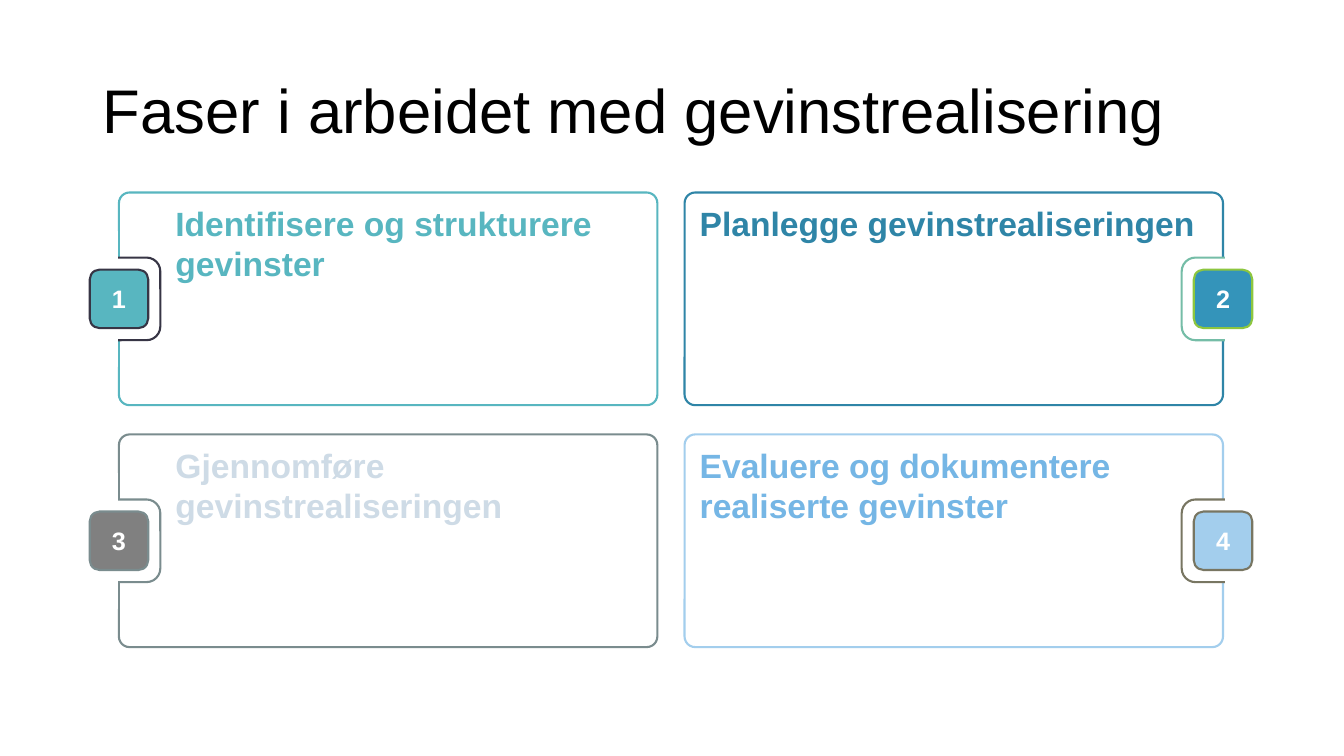
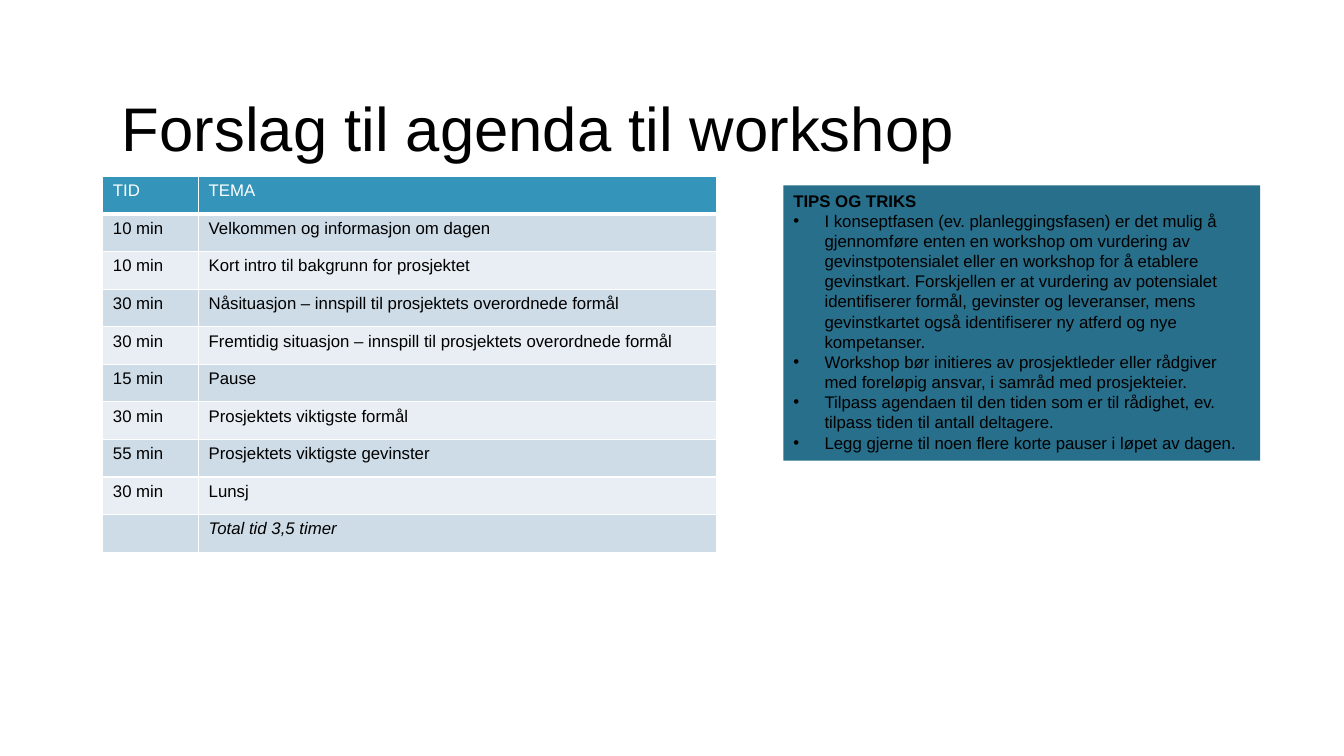
from lxml import etree
from pptx import Presentation, util as u
from pptx.dml.color import RGBColor
from pptx.enum import shapes, text
from pptx.oxml.ns import qn

# Content
FACES = "Faser i arbeidet med gevinstrealisering"
# heading, panel line, heading colour, badge fill, badge line
PHASES = [
    ("Identifisere og strukturere gevinster", "teal", "teal", "teal", "ink"),
    ("Planlegge gevinstrealiseringen", "ocean", "ocean", "blue", "lime"),
    ("Gjennomføre gevinstrealiseringen", "slate", "mist", "grey", "slate"),
    ("Evaluere og dokumentere realiserte gevinster", "sky", "azure", "sky", "olive"),
]
BRACKET_LINES = ["ink", "green", "slate", "olive"]
AGENDA_TITLE = "Forslag til agenda til workshop"
AGENDA = [
    ("TID", "TEMA"),
    ("10 min", "Velkommen og informasjon om dagen"),
    ("10 min", "Kort intro til bakgrunn for prosjektet"),
    ("30 min", "Nåsituasjon – innspill til prosjektets overordnede formål"),
    ("30 min", "Fremtidig situasjon – innspill til prosjektets overordnede formål"),
    ("15 min", "Pause"),
    ("30 min", "Prosjektets viktigste formål"),
    ("55 min", "Prosjektets viktigste gevinster"),
    ("30 min", "Lunsj"),
    ("", "Total tid 3,5 timer"),
]
TIPS_HEADING = "TIPS OG TRIKS"
TIPS = [
    "I konseptfasen (ev. planleggingsfasen) er det mulig å gjennomføre enten en "
    "workshop om vurdering av gevinstpotensialet eller en workshop for å etablere "
    "gevinstkart. Forskjellen er at vurdering av potensialet identifiserer formål, "
    "gevinster og leveranser, mens gevinstkartet også identifiserer ny atferd og nye "
    "kompetanser.",
    "Workshop bør initieres av prosjektleder eller rådgiver med foreløpig ansvar, "
    "i samråd med prosjekteier.",
    "Tilpass agendaen til den tiden som er til rådighet, ev. tilpass tiden til antall "
    "deltagere.",
    "Legg gjerne til noen flere korte pauser i løpet av dagen.",
]

# Shared style
COLORS = {
    "black": "000000", "white": "FFFFFF", "teal": "58B6C0", "ocean": "2F85A7",
    "slate": "7A8C8E", "sky": "A3CEED", "mist": "CEDBE6", "azure": "75B6E5",
    "blue": "3494BA", "grey": "808080", "ink": "373545", "lime": "8DC63F",
    "green": "75BDA7", "olive": "787662", "band": "CEDCE7", "pale": "E8EEF3",
    "deep": "276F8B",
}
FONT = "Arial"
WIDTH, HEIGHT = 13.33, 7.5
RECT, ROUND = shapes.MSO_SHAPE.RECTANGLE, shapes.MSO_SHAPE.ROUNDED_RECTANGLE


def rgb(name):
    return RGBColor.from_string(COLORS[name])


def write(p, words, size, color, **fmt):
    r = p.add_run()
    r.text = words
    for key, value in dict(name=FONT, size=u.Pt(size), **fmt).items():
        setattr(r.font, key, value)
    r.font.color.rgb = rgb(color)


def inches(box):
    return [u.Inches(v) for v in box]


def add_box(tree, kind, box, fill, line=None, weight=1.5):
    sp = tree.add_shape(kind, *inches(box))
    sp.shadow.inherit = False
    sp.fill.solid()
    sp.fill.fore_color.rgb = rgb(fill)
    if line:
        sp.line.color.rgb = rgb(line)
        sp.line.width = u.Pt(weight)
    else:
        sp.line.fill.background()
    return sp


def centred(x, y, size):
    return x - size / 2, y - size / 2, size, size


def titled_slide(prs, words, box):
    s = prs.slides.add_slide(prs.slide_layouts[5])
    title = s.shapes.title
    title.left, title.top, title.width, title.height = inches(box)
    tf = title.text_frame
    tf.auto_size = text.MSO_AUTO_SIZE.NONE
    tf.vertical_anchor = text.MSO_ANCHOR.MIDDLE
    p = tf.paragraphs[0]
    p.alignment, p.line_spacing = text.PP_ALIGN.LEFT, 0.9
    write(p, words, 44, "black")
    return s


def build_phases(prs):
    s = titled_slide(prs, FACES, (0.92, 0.4, 11.5, 1.45))
    left, top, w, h = 1.18, 1.91, 5.34, 2.11
    col_step, row_step = w + 0.27, h + 0.29
    bracket, badge, mask_w, mask_h, margin = 0.82, 0.58, 0.67, 1.34, 0.5
    for i, (heading, line, ink, fill, edge) in enumerate(PHASES):
        row, col = divmod(i, 2)
        x, y = left + col * col_step, top + row * row_step

        # Panel and heading, indented past the bracket on the left
        panel = add_box(s.shapes, ROUND, (x, y, w, h), "white", line)
        panel.adjustments[0] = 0.05
        indent = 0.15 if col else 0.56
        label = s.shapes.add_textbox(*inches((x + indent, y + 0.1, w - indent - 0.15, 0.81)))
        tf = label.text_frame
        tf.word_wrap = True
        for side in ("left", "top", "right", "bottom"):
            setattr(tf, f"margin_{side}", 0)
        write(tf.paragraphs[0], heading, 24, ink, bold=True)

        # Half bracket and numbered badge on the panel's outer edge
        outer, middle = x + col * w, y + h / 2
        mask_x = WIDTH - margin - mask_w if col else margin
        group = s.shapes.add_group_shape().shapes
        add_box(group, ROUND, centred(outer, middle, bracket), "white", BRACKET_LINES[i])
        add_box(group, RECT, (mask_x, middle - mask_h / 2, mask_w, mask_h),
                "white", "white", 0.75)
        sp = add_box(group, ROUND, centred(outer, middle, badge), fill, edge)
        write(sp.text_frame.paragraphs[0], str(i + 1), 18, "white", bold=True)


def set_borders(cell, header):
    tcPr = cell._tc.get_or_add_tcPr()
    for i, side in enumerate("LRTB"):
        points = 3 if header and side == "B" else 1
        ln = etree.Element(qn(f"a:ln{side}"), w=str(u.Pt(points)))
        fill = etree.SubElement(ln, qn("a:solidFill"))
        etree.SubElement(fill, qn("a:srgbClr"), val=COLORS["white"])
        tcPr.insert(i, ln)


def build_agenda(prs):
    s = titled_slide(prs, AGENDA_TITLE, (1.11, 0.93, 11.55, 0.76))

    # Agenda table
    cols, total_h = (0.95, 5.14), 3.73
    table = s.shapes.add_table(len(AGENDA), len(cols),
                               *inches((1.02, 1.75, sum(cols), total_h))).table
    for column, width in zip(table.columns, cols):
        column.width = u.Inches(width)
    for i, entry in enumerate(AGENDA):
        fill = "blue" if i == 0 else ("band" if i % 2 else "pale")
        for j, words in enumerate(entry):
            cell = table.cell(i, j)
            cell.fill.solid()
            cell.fill.fore_color.rgb = rgb(fill)
            set_borders(cell, i == 0)
            write(cell.text_frame.paragraphs[0], words, 12, "black" if i else "white",
                  bold=False, italic=i == len(AGENDA) - 1)

    # Tips box
    sp = add_box(s.shapes, RECT, (7.77, 1.84, 4.73, 2.73), "deep")
    tf = sp.text_frame
    tf.vertical_anchor = text.MSO_ANCHOR.TOP
    tf.paragraphs[0].alignment = text.PP_ALIGN.LEFT
    write(tf.paragraphs[0], TIPS_HEADING, 12, "black", bold=True)
    hang = u.Inches(0.31)
    for tip in TIPS:
        p = tf.add_paragraph()
        p.alignment = text.PP_ALIGN.LEFT
        pPr = p._p.get_or_add_pPr()
        pPr.set("marL", str(hang))
        pPr.set("indent", str(-hang))
        etree.SubElement(pPr, qn("a:buFont"), typeface=FONT)
        etree.SubElement(pPr, qn("a:buChar"), char="•")
        write(p, tip, 12, "black")


def main():
    prs = Presentation()
    prs.slide_width, prs.slide_height = inches((WIDTH, HEIGHT))
    build_phases(prs)
    build_agenda(prs)
    prs.save("out.pptx")


if __name__ == "__main__":
    main()
